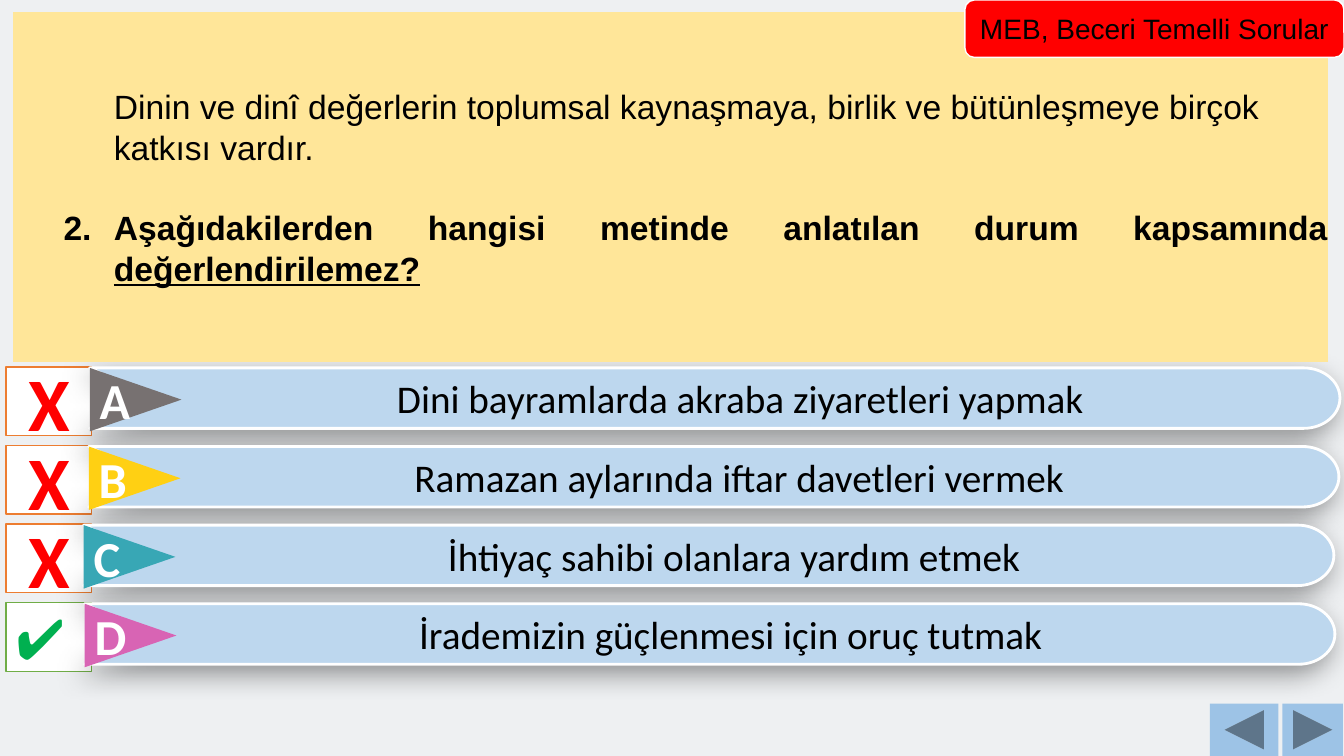
"""Builds a multiple-choice question slide with marked answers."""
import dataclasses

import lxml.etree
import pptx
import pptx.dml.color
import pptx.enum.shapes
import pptx.enum.text
import pptx.oxml.ns
import pptx.util

Inches = pptx.util.Inches
Pt = pptx.util.Pt
SHAPES = pptx.enum.shapes.MSO_SHAPE
ALIGN = pptx.enum.text.PP_ALIGN
ANCHOR = pptx.enum.text.MSO_ANCHOR
qn = pptx.oxml.ns.qn


@dataclasses.dataclass(frozen=True)
class Theme:
    """Colours, fonts and type sizes of the slide."""
    background: str = "EEF0F2"
    panel: str = "FFE699"
    tag: str = "FF0000"
    bar: str = "BDD7EE"
    button: str = "9DC3E6"
    white: str = "FFFFFF"
    text: str = "000000"
    wrong: str = "FF0000"
    wrong_edge: str = "ED7D31"
    right: str = "00B050"
    right_edge: str = "70AD47"
    question_font: str = "Arial"
    answer_font: str = "Calibri"
    tag_size: int = 20
    question_size: int = 24
    answer_size: int = 28
    letter_size: int = 36
    check_size: int = 40
    cross_size: int = 54


THEME = Theme()
ANSWERS = [
    ("A", "Dini bayramlarda akraba ziyaretleri yapmak", 0.89, "777171", False),
    ("B", "Ramazan aylarında iftar davetleri vermek", 0.88, "FFD013", False),
    ("C", "İhtiyaç sahibi olanlara yardım etmek", 0.83, "38A7B5", False),
    ("D", "İrademizin güçlenmesi için oruç tutmak ", 0.84, "D864B4", True),
]
FIRST_TOP, ROW_PITCH = 3.65, 0.78
BAR_WIDTH, BAR_HEIGHT, BAR_CURVE, BAR_NOTCH = 12.4, 0.6, 0.36, 0.63
ROUNDNESS = 0.55


def rgb(value):
    """Return a colour object for a hex value."""
    return pptx.dml.color.RGBColor.from_string(value)


def paint(shape, fill, edge=None, width=1):
    """Give a shape a plain fill, an optional edge and no shadow."""
    shape.shadow.inherit = False
    shape.fill.solid()
    shape.fill.fore_color.rgb = rgb(fill)
    if edge:
        shape.line.color.rgb = rgb(edge)
        shape.line.width = Pt(width)
    else:
        shape.line.fill.background()


def add_block(slide, kind, box, fill, edge=None):
    """Add a painted preset shape."""
    block = slide.shapes.add_shape(kind, *map(Inches, box))
    paint(block, fill, edge)
    return block


def write(paragraph, text, *, size, font, color=THEME.text, bold=False,
          underline=False, align=ALIGN.CENTER):
    """Append one formatted run to a paragraph."""
    paragraph.alignment = align
    run = paragraph.add_run()
    run.text = text
    run.font.size, run.font.name = Pt(size), font
    run.font.bold, run.font.underline = bold, underline
    run.font.color.rgb = rgb(color)


def set_frame(shape, inset=None):
    """Centre the text vertically, wrap it and return its first paragraph."""
    frame = shape.text_frame
    frame.word_wrap = True
    frame.auto_size = pptx.enum.text.MSO_AUTO_SIZE.NONE
    frame.vertical_anchor = ANCHOR.MIDDLE
    if inset is not None:
        frame.margin_left = frame.margin_right = Inches(inset)
        frame.margin_top = frame.margin_bottom = Inches(inset)
    return frame.paragraphs[0]


def indent(paragraph, left, first=0.0, number=None):
    """Set indents and either a list number or no bullet."""
    props = paragraph._p.get_or_add_pPr()
    props.set("marL", str(Inches(left)))
    props.set("indent", str(Inches(first)))
    if number:
        lxml.etree.SubElement(props, qn("a:buFont"), typeface="+mj-lt")
        lxml.etree.SubElement(props, qn("a:buAutoNum"), type="arabicPeriod",
                              startAt=str(number))
    else:
        lxml.etree.SubElement(props, qn("a:buNone"))


def add_question(slide):
    """Fill the body placeholder with the statement and the question."""
    panel = slide.placeholders[1]
    panel.left, panel.top = Inches(0.13), Inches(0.12)
    panel.width, panel.height = Inches(13.04), Inches(3.47)
    paint(panel, THEME.panel)
    style = {"size": THEME.question_size, "font": THEME.question_font}
    statement = set_frame(panel, inset=0)
    statement.space_before = Pt(0)
    write(statement, "Dinin ve dinî değerlerin toplumsal kaynaşmaya, birlik ve "
          "bütünleşmeye birçok katkısı vardır.", align=ALIGN.LEFT, **style)
    indent(statement, 1)
    question = panel.text_frame.add_paragraph()
    question.space_before = Pt(28.8)
    write(question, "Aşağıdakilerden hangisi metinde anlatılan durum kapsamında ",
          bold=True, align=ALIGN.JUSTIFY, **style)
    write(question, "değerlendirilemez?", bold=True, underline=True,
          align=ALIGN.JUSTIFY, **style)
    indent(question, 1, -0.5, number=2)
    slide.shapes._spTree.append(panel._element)


def add_tag(slide):
    """Add the rounded tag in the top right corner."""
    tag = add_block(slide, SHAPES.ROUNDED_RECTANGLE, (9.57, 0, 3.76, 0.57),
                    THEME.tag, THEME.white)
    write(set_frame(tag, inset=0), "MEB, Beceri Temelli Sorular",
          size=THEME.tag_size, font=THEME.question_font)


def add_mark(slide, top, correct):
    """Add the box with a check or a cross."""
    edge = THEME.right_edge if correct else THEME.wrong_edge
    box = add_block(slide, SHAPES.RECTANGLE, (0.06, top, 0.85, 0.68),
                    THEME.white, edge)
    paragraph = set_frame(box)
    if correct:
        write(paragraph, "✔", size=THEME.check_size, font=THEME.answer_font,
              color=THEME.right, align=ALIGN.LEFT)
    else:
        write(paragraph, "X", size=THEME.cross_size, font=THEME.answer_font,
              color=THEME.wrong, bold=True)


def round_end(bar):
    """Turn the two segments at the right end of a bar into curves."""
    half, start = BAR_HEIGHT / 2, BAR_WIDTH - BAR_CURVE
    reach, rise = start + BAR_CURVE * ROUNDNESS, half * (1 - ROUNDNESS)
    tip = (BAR_WIDTH, half)
    curves = [
        [(reach, 0), (BAR_WIDTH, rise), tip],
        [(BAR_WIDTH, BAR_HEIGHT - rise), (reach, BAR_HEIGHT), (start, BAR_HEIGHT)],
    ]
    segments = list(bar._element.iter(qn("a:lnTo")))[1:3]
    for segment, points in zip(segments, curves):
        segment.clear()
        curve = lxml.etree.Element(qn("a:cubicBezTo"))
        for x, y in points:
            lxml.etree.SubElement(curve, qn("a:pt"), x=str(Inches(x)),
                                  y=str(Inches(y)))
        segment.getparent().replace(segment, curve)


def add_bar(slide, left, top, answer):
    """Add an answer bar with a notched left and a rounded right end."""
    right, bottom, middle = left + BAR_WIDTH, top + BAR_HEIGHT, top + BAR_HEIGHT / 2
    points = [(right - BAR_CURVE, top), (right, middle), (right - BAR_CURVE, bottom),
              (left, bottom), (left + BAR_NOTCH, middle)]
    builder = slide.shapes.build_freeform(Inches(left), Inches(top))
    builder.add_line_segments([(Inches(x), Inches(y)) for x, y in points])
    bar = builder.convert_to_shape()
    round_end(bar)
    paint(bar, THEME.bar, THEME.white, 2)
    effects = bar._element.spPr.find(qn("a:effectLst"))
    shadow = lxml.etree.SubElement(
        effects, qn("a:outerShdw"), blurRad=str(Pt(20)), dist=str(Pt(7)),
        dir="8100000", algn="ctr", rotWithShape="0")
    tint = lxml.etree.SubElement(shadow, qn("a:srgbClr"), val=THEME.text)
    lxml.etree.SubElement(tint, qn("a:alpha"), val="40000")
    paragraph = set_frame(bar)
    write(paragraph, answer, size=THEME.answer_size, font=THEME.answer_font)
    indent(paragraph, 0.5)


def add_letter(slide, left, top, letter, color):
    """Add the triangle pointing right with the upright answer letter."""
    pointer = add_block(slide, SHAPES.ISOSCELES_TRIANGLE,
                        (left + 0.14, top - 0.14, 0.63, 0.91), color)
    pointer.rotation = 90
    write(set_frame(pointer), letter, size=THEME.letter_size,
          font=THEME.answer_font, color=THEME.white, bold=True)
    pointer.text_frame._txBody.bodyPr.set("vert", "vert270")


def main():
    """Build and save the slide."""
    deck = pptx.Presentation()
    deck.slide_width, deck.slide_height = Inches(13.33), Inches(7.5)
    slide = deck.slides.add_slide(deck.slide_layouts[1])
    slide.background.fill.solid()
    slide.background.fill.fore_color.rgb = rgb(THEME.background)
    slide.shapes._spTree.remove(slide.shapes.title._element)
    tops = [FIRST_TOP + ROW_PITCH * row for row in range(len(ANSWERS))]
    for top, (*_, correct) in zip(tops, ANSWERS):
        add_mark(slide, top - 0.01, correct)
    for top, (letter, answer, left, color, _) in zip(tops, ANSWERS):
        add_bar(slide, left, top, answer)
        add_letter(slide, left, top, letter, color)
    add_question(slide)
    for kind, left, width in ((SHAPES.ACTION_BUTTON_BACK_OR_PREVIOUS, 12, 0.68),
                              (SHAPES.ACTION_BUTTON_FORWARD_OR_NEXT, 12.72, 0.6)):
        add_block(slide, kind, (left, 6.98, width, 0.52), THEME.button)
    add_tag(slide)
    deck.save("out.pptx")


if __name__ == "__main__":
    main()
